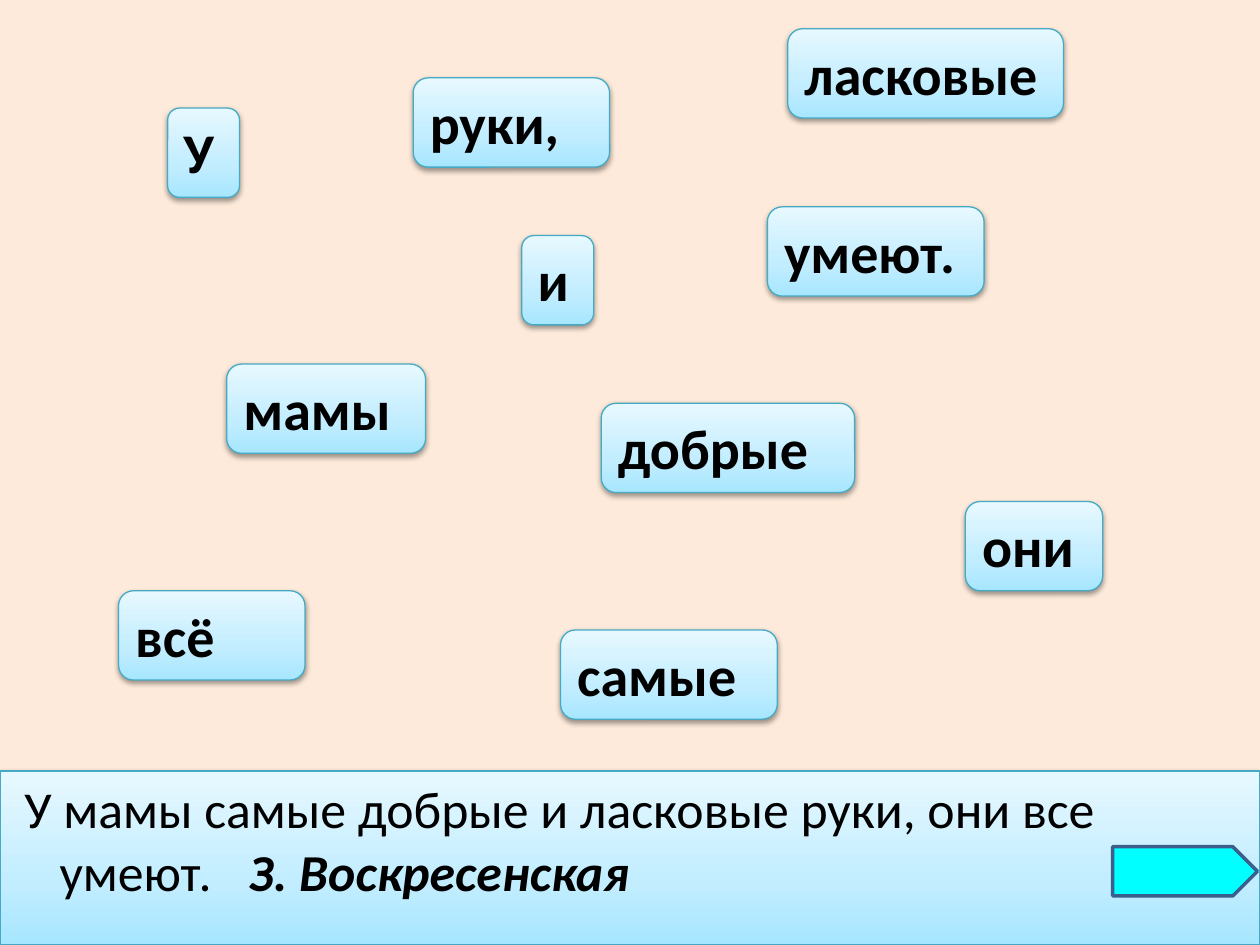
import copy
import dataclasses

import pptx
import pptx.dml.color
import pptx.enum.shapes
import pptx.enum.text
import pptx.oxml
import pptx.oxml.ns
import pptx.util

Cm = pptx.util.Cm
Shapes = pptx.enum.shapes.MSO_SHAPE
DRAWING = pptx.oxml.ns.nsdecls("a")


@dataclasses.dataclass(frozen=True)
class Theme:
    """Colours, font and type sizes of the slide."""
    font: str = "Calibri"
    text: str = "000000"
    page: str = "FDEADA"
    gradient: tuple = ((0, "A7E6FF"), (0.35, "C1EDFF"), (1, "E7F8FF"))
    edge: str = "46AAC5"
    arrow: str = "00FFFF"
    arrow_edge: str = "3A5F8C"
    word_size: float = 32
    answer_size: float = 29.6


@dataclasses.dataclass(frozen=True)
class Box:
    """A place on the page, in centimetres."""
    left: float
    top: float
    width: float
    height: float

    def inner(self, left, top, width, height):
        """Return a box placed relative to this one."""
        return Box(self.left + left, self.top + top, width, height)

    def lengths(self):
        """Return left, top, width and height as lengths."""
        return [Cm(value) for value in dataclasses.astuple(self)]


THEME = Theme()
WORD_HEIGHT = 1.8
WORDS = [
    ("У", 3.38, 2.18, 1.45),
    ("мамы", 4.57, 7.34, 4.01),
    ("самые", 11.3, 12.7, 4.37),
    ("добрые", 12.12, 8.13, 5.11),
    ("и", 10.52, 4.75, 1.45),
    ("ласковые", 15.88, 0.58, 5.56),
    ("руки,", 8.33, 1.57, 3.96),
    ("они", 19.46, 10.11, 2.77),
    ("всё", 2.39, 11.91, 3.76),
    ("умеют.", 15.47, 4.17, 4.37),
]


def colour(value):
    """Turn a hex value into a colour."""
    return pptx.dml.color.RGBColor.from_string(value)


def write(para, text, *, size, bold=False, italic=False):
    """Add a formatted span of text to a paragraph."""
    span = para.add_run()
    span.text = text
    span.font.name = THEME.font
    span.font.size = pptx.util.Pt(size)
    span.font.bold = bold
    span.font.italic = italic
    span.font.color.rgb = colour(THEME.text)


def outline(shape, value, width):
    """Give a shape its outline and clear its shadow."""
    shape.line.color.rgb = colour(value)
    shape.line.width = pptx.util.Pt(width)
    shape._element.spPr.get_or_add_ln()
    effects = shape._element.spPr
    for old in effects.findall(pptx.oxml.ns.qn("a:effectLst")):
        effects.remove(old)
    effects.append(pptx.oxml.parse_xml(f"<a:effectLst {DRAWING}/>"))


def glaze(shape):
    """Give a shape the blue gradient, thin edge and soft shadow."""
    shape.fill.gradient()
    shape.fill.gradient_angle = 90
    stop_list = shape._element.spPr.find(".//" + pptx.oxml.ns.qn("a:gsLst"))
    stop_list.append(copy.deepcopy(stop_list[-1]))
    for stop, (position, value) in zip(shape.fill.gradient_stops, THEME.gradient):
        stop.position = position
        stop.color.rgb = colour(value)
    outline(shape, THEME.edge, 0.75)
    effects = shape._element.spPr.find(pptx.oxml.ns.qn("a:effectLst"))
    effects.append(pptx.oxml.parse_xml(
        f'<a:outerShdw {DRAWING} blurRad="40000" dist="20000" dir="5400000" rotWithShape="0">'
        '<a:srgbClr val="000000"><a:alpha val="38000"/></a:srgbClr></a:outerShdw>'))


def add_word(page, box, text):
    """Add one word card."""
    card = page.shapes.add_shape(Shapes.ROUNDED_RECTANGLE, *box.lengths())
    glaze(card)
    frame = card.text_frame
    frame.word_wrap = True
    frame.auto_size = pptx.enum.text.MSO_AUTO_SIZE.SHAPE_TO_FIT_TEXT
    frame.vertical_anchor = pptx.enum.text.MSO_ANCHOR.TOP
    para = frame.paragraphs[0]
    para.alignment = pptx.enum.text.PP_ALIGN.LEFT
    write(para, text, size=THEME.word_size, bold=True)


def add_words(page, box):
    """Scatter the word cards over the given box."""
    for text, left, top, width in WORDS:
        add_word(page, box.inner(left, top, width, WORD_HEIGHT), text)


def fill_answer(panel, box):
    """Place the body placeholder and write the sentence with its author."""
    panel.left, panel.top, panel.width, panel.height = box.lengths()
    glaze(panel)
    frame = panel.text_frame
    frame.word_wrap = True
    frame.auto_size = pptx.enum.text.MSO_AUTO_SIZE.NONE
    frame.vertical_anchor = pptx.enum.text.MSO_ANCHOR.TOP
    para = frame.paragraphs[0]
    layout = para._p.get_or_add_pPr()
    layout.set("marL", str(Cm(0.95)))
    layout.set("indent", str(Cm(-0.95)))
    layout.append(pptx.oxml.parse_xml(f"<a:buNone {DRAWING}/>"))
    layout.append(pptx.oxml.parse_xml(
        f'<a:tabLst {DRAWING}><a:tab pos="{Cm(4.72)}" algn="l"/></a:tabLst>'))
    write(para, " У мамы самые добрые и ласковые руки, они все умеют.",
          size=THEME.answer_size)
    write(para, "\tЗ. Воскресенская", size=THEME.answer_size, bold=True, italic=True)


def add_arrow(page, box):
    """Add the arrow that leads onward."""
    arrow = page.shapes.add_shape(Shapes.PENTAGON, *box.lengths())
    arrow.fill.solid()
    arrow.fill.fore_color.rgb = colour(THEME.arrow)
    outline(arrow, THEME.arrow_edge, 2)


def main():
    """Build the slide and save it."""
    deck = pptx.Presentation()
    deck.slide_width, deck.slide_height = Cm(25.4), Cm(19.05)
    page = deck.slides.add_slide(deck.slide_layouts[1])
    page.background.fill.solid()
    page.background.fill.fore_color.rgb = colour(THEME.page)
    title = page.shapes.title._element
    title.getparent().remove(title)
    answer = Box(0, 15.54, 25.4, 3.51)
    fill_answer(page.placeholders[1], answer)
    add_words(page, Box(0, 0, 25.4, 15.54))
    add_arrow(page, answer.inner(22.43, 1.53, 2.92, 0.99))
    deck.save("out.pptx")


if __name__ == "__main__":
    main()
